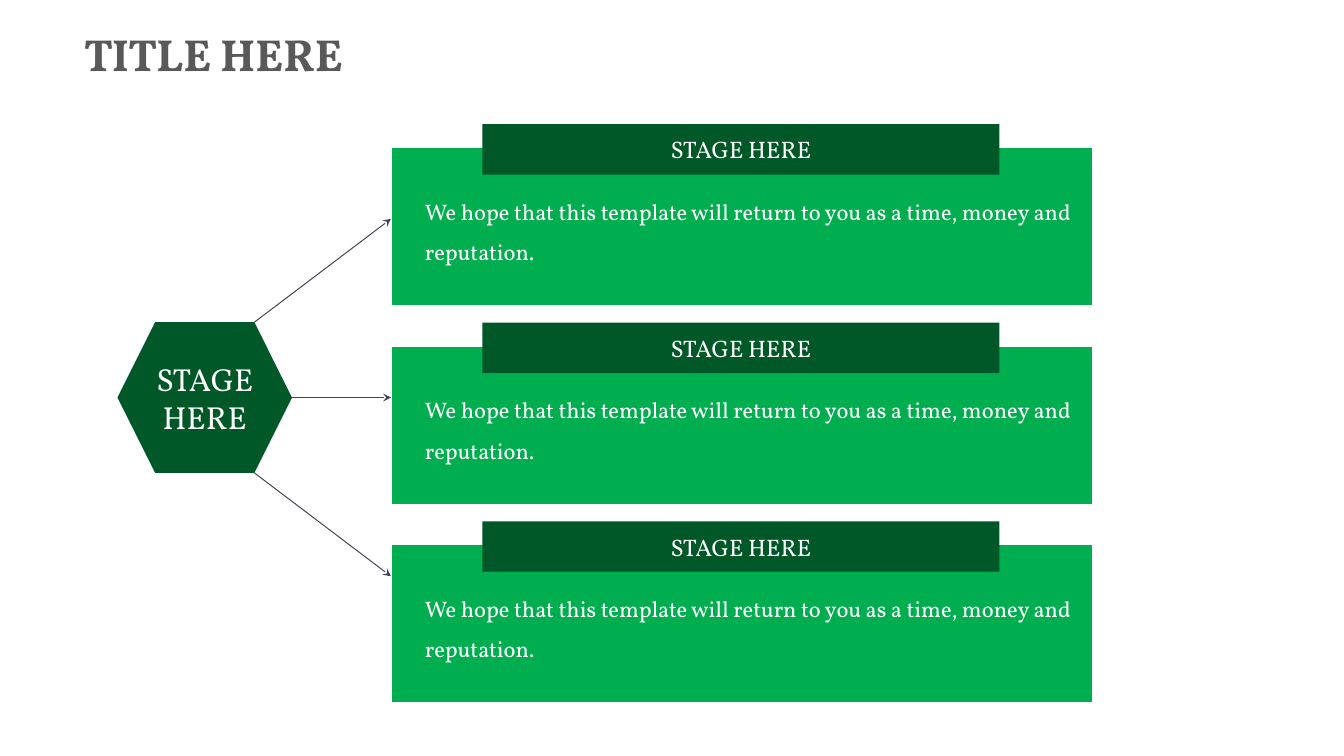
from collections import namedtuple
from dataclasses import dataclass

from lxml.etree import SubElement
from pptx import Presentation
from pptx.dml.color import RGBColor
from pptx.enum.shapes import MSO_CONNECTOR as Connector, MSO_SHAPE as Shape
from pptx.enum.text import MSO_ANCHOR as Anchor, PP_ALIGN as Align
from pptx.oxml.ns import qn
from pptx.util import Pt

Box = namedtuple("Box", "left top width height")


@dataclass(frozen=True)
class Theme:
    font: str = "Vollkorn"
    dark: str = "005727"
    bright: str = "00AE4F"
    white: str = "FFFFFF"
    arrow: str = "414455"
    heading: str = "595959"
    title_size: float = 33.8
    hub_size: float = 24
    tab_size: float = 18
    body_size: float = 16.9


THEME = Theme()
TITLE = Box(55.5, 16, 356.5, 48)
HUB = Box(88.5, 242.75, 131.5, 113.5)
HUB_SLANT = 0.25  # share of the hub's height
FIRST_CARD = Box(294.5, 111, 528.5, 119.5)
CARD_PITCH = 149.6
CARD_COUNT = 3
ARROW_SPREAD = 134.6
BODY = "We hope that this template will return to you as a time, money and reputation."


def colour(code):
    return RGBColor.from_string(code)


def in_points(box):
    return [Pt(length) for length in box]


def write(shape, text, size, code=THEME.white, anchor=Anchor.MIDDLE, bold=False, **para_format):
    frame = shape.text_frame
    margins = dict(margin_left=Pt(7.6), margin_right=Pt(7.6),
                   margin_top=Pt(3.8), margin_bottom=Pt(3.8))
    for name, value in dict(word_wrap=True, vertical_anchor=anchor, **margins).items():
        setattr(frame, name, value)
    para = frame.paragraphs[0]
    for name, value in para_format.items():
        setattr(para, name, value)
    span = para.add_run()
    span.text = text
    for name, value in dict(name=THEME.font, size=Pt(size), bold=bold).items():
        setattr(span.font, name, value)
    span.font.color.rgb = colour(code)


def add_block(page, kind, box, fill, outline=None):
    block = page.shapes.add_shape(kind, *in_points(box))
    block.shadow.inherit = False
    block.fill.solid()
    block.fill.fore_color.rgb = colour(fill)
    if outline:
        block.line.color.rgb = colour(outline)
        block.line.width = Pt(1)
    else:
        block.line.fill.background()
    return block


def add_title(page, box):
    title = page.shapes.add_textbox(*in_points(box))
    write(title, "TITLE HERE", THEME.title_size, THEME.heading, Anchor.TOP,
          bold=True, alignment=Align.LEFT)


def add_card(page, box):
    """Place a panel with its text and a tab across its top edge."""
    add_block(page, Shape.RECTANGLE, box, THEME.bright, THEME.white)
    tab_box = Box(box.left + 69, box.top - 17.5, 389.5, 38)
    tab = add_block(page, Shape.RECTANGLE, tab_box, THEME.dark)
    write(tab, "STAGE HERE", THEME.tab_size, alignment=Align.CENTER)
    body = page.shapes.add_textbox(*in_points((box.left + 18, box.top + 24.2, 502.5, 69)))
    write(body, BODY, THEME.body_size, anchor=Anchor.TOP,
          alignment=Align.JUSTIFY, line_spacing=1.5)


def add_hub(page, box):
    hub = add_block(page, Shape.HEXAGON, box, THEME.dark)
    hub.adjustments[0] = HUB_SLANT
    write(hub, "STAGE HERE", THEME.hub_size, alignment=Align.CENTER)


def add_arrow(page, start, end):
    arrow = page.shapes.add_connector(Connector.STRAIGHT, *in_points(start + end))
    arrow.line.color.rgb = colour(THEME.arrow)
    arrow.line.width = Pt(0.75)
    SubElement(arrow.line._get_or_add_ln(), qn("a:tailEnd"), type="stealth")
    SubElement(arrow._element.spPr, qn("a:effectLst"))


def add_arrows(page, hub, target_left):
    """Fan arrows out from the hub's upper, right and lower corners."""
    middle = hub.top + hub.height / 2
    for side in (-1, 0, 1):
        inset = abs(side) * HUB_SLANT * hub.height
        start = (hub.left + hub.width - inset, middle + side * hub.height / 2)
        add_arrow(page, start, (target_left, middle + side * ARROW_SPREAD))


def main():
    deck = Presentation()
    deck.slide_width, deck.slide_height = Pt(1012.5), Pt(569.5)
    page = deck.slides.add_slide(deck.slide_layouts[6])
    add_title(page, TITLE)
    for row in range(CARD_COUNT):
        add_card(page, FIRST_CARD._replace(top=FIRST_CARD.top + row * CARD_PITCH))
    add_hub(page, HUB)
    add_arrows(page, HUB, FIRST_CARD.left)
    deck.save("out.pptx")


if __name__ == "__main__":
    main()
